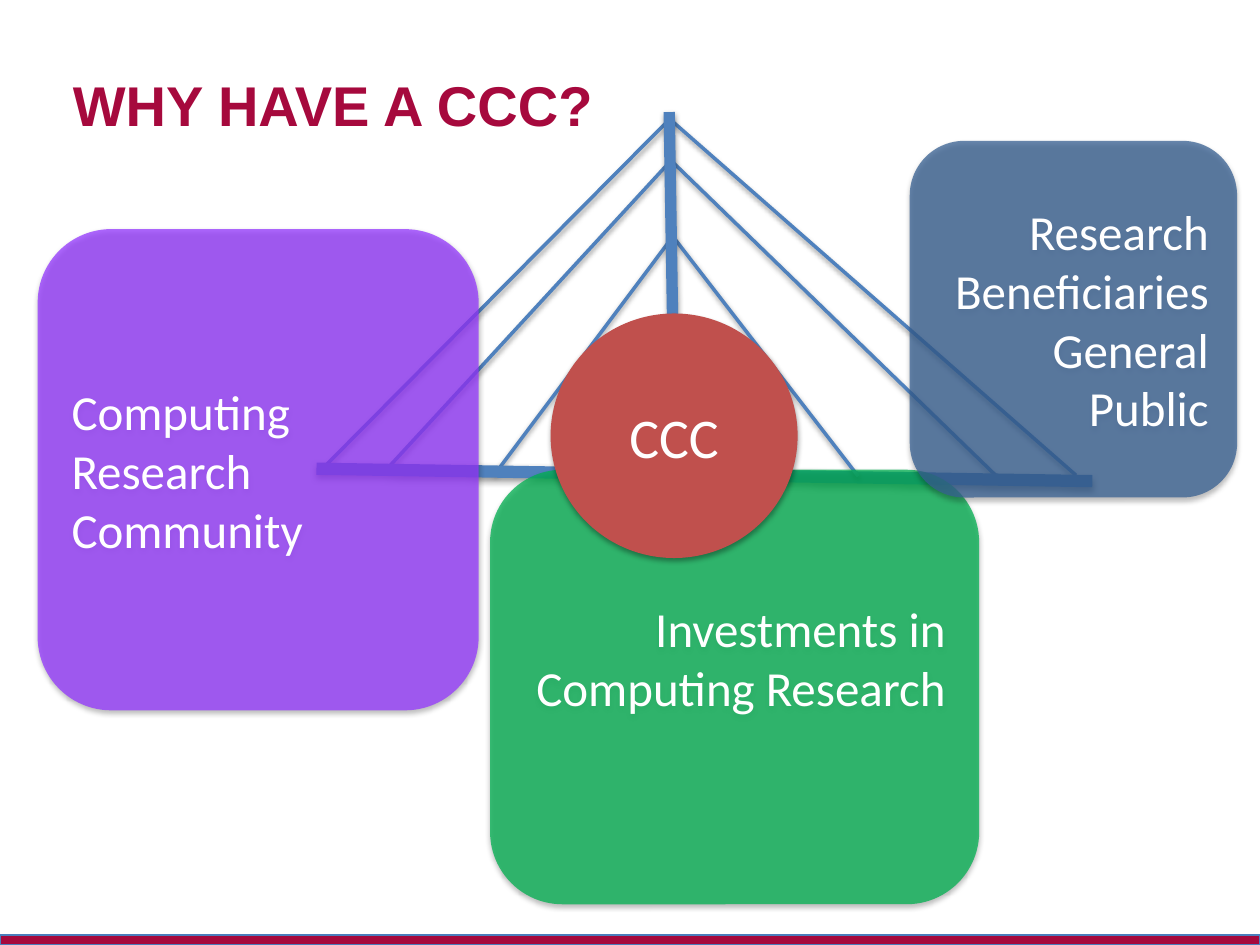
from lxml import etree
from pptx import Presentation
from pptx.dml.color import RGBColor
from pptx.enum.shapes import MSO_CONNECTOR, MSO_SHAPE
from pptx.enum.text import MSO_ANCHOR, PP_ALIGN
from pptx.oxml.ns import qn
from pptx.util import Cm, Pt

RECT, ROUND, OVAL = MSO_SHAPE.RECTANGLE, MSO_SHAPE.ROUNDED_RECTANGLE, MSO_SHAPE.OVAL
LEFT, CENTER, RIGHT = PP_ALIGN.LEFT, PP_ALIGN.CENTER, PP_ALIGN.RIGHT
STRAIGHT = MSO_CONNECTOR.STRAIGHT
MIDDLE = MSO_ANCHOR.MIDDLE


def rgb(value):
    return RGBColor.from_string(value)


def add_shadow(s, opacity, distance):
    effects = etree.SubElement(s._element.spPr, qn("a:effectLst"))
    shadow = etree.SubElement(effects, qn("a:outerShdw"), blurRad=str(Pt(3.1)),
                              dist=str(Pt(distance)), dir="5400000", rotWithShape="0")
    color = etree.SubElement(shadow, qn("a:srgbClr"), val="000000")
    etree.SubElement(color, qn("a:alpha"), val=str(opacity * 1000))


prs = Presentation()
prs.slide_width, prs.slide_height = Cm(25.4), Cm(19.05)
slide = prs.slides.add_slide(prs.slide_layouts[6])
shapes = slide.shapes

bar = shapes.add_shape(RECT, Cm(0), Cm(18.85), Cm(25.4), Cm(0.2))
bar.shadow.inherit = False
bar.fill.solid()
bar.fill.fore_color.rgb = rgb("A6093D")
bar.line.color.rgb = rgb("4B7EBC")
bar.line.width = Pt(0.75)

bridge = [
    (13.54, 4.8, 9.98, 9.55, 2),
    (13.56, 3.2, 7.85, 9.4, 2),
    (6.5, 9.45, 13.51, 2.39, 2),
    (13.49, 2.39, 21.69, 9.58, 2),
    (13.49, 3.2, 20.09, 9.6, 2),
    (6.38, 9.45, 22.02, 9.7, 7),
    (13.59, 4.8, 17.3, 9.6, 2),
    (13.49, 2.26, 13.61, 9.55, 6.5),
]
for x1, y1, x2, y2, width in bridge:
    cable = shapes.add_connector(STRAIGHT, Cm(x1), Cm(y1), Cm(x2), Cm(y2))
    cable.line.color.rgb = rgb("4F81BD")
    cable.line.width = Pt(width)
    add_shadow(cable, 38, 1.6)

title = shapes.add_textbox(Cm(1.22), Cm(0.51), Cm(22.86), Cm(3.18))
tf = title.text_frame
tf.word_wrap = True
tf.vertical_anchor = MIDDLE
r = tf.paragraphs[0].add_run()
r.text = "WHY HAVE A CCC?"
r.font.name = "Arial"
r.font.size = Pt(32)
r.font.bold = True
r.font.color.rgb = rgb("A6093D")

groups = [
    (ROUND, 0.76, 4.62, 8.89, 9.7, "9437FF", 75, LEFT, 28, 0.13,
     ["Computing", "Research Community"]),
    (ROUND, 9.88, 9.47, 9.86, 8.76, "00B050", 75, RIGHT, 28, 1.32,
     ["Investments in Computing Research"]),
    (OVAL, 11.1, 6.32, 4.98, 4.93, "C0504D", 100, CENTER, 32, 0.13, ["CCC"]),
    (ROUND, 18.34, 2.84, 6.6, 7.19, "376092", 75, RIGHT, 28, 0.13,
     ["Research Beneficiaries", "General Public"]),
]
for kind, x, y, w, h, color, opacity, align, size, bottom, lines in groups:
    sp = shapes.add_shape(kind, Cm(x), Cm(y), Cm(w), Cm(h))
    sp.fill.solid()
    sp.fill.fore_color.rgb = rgb(color)
    if opacity < 100:
        fill_color = sp._element.spPr.find(qn("a:solidFill"))[0]
        etree.SubElement(fill_color, qn("a:alpha"), val=str(opacity * 1000))
    sp.line.fill.background()
    add_shadow(sp, 35, 1.8)
    tf = sp.text_frame
    tf.word_wrap = True
    tf.vertical_anchor = MIDDLE
    tf.margin_bottom = Cm(bottom)
    for i, line in enumerate(lines):
        p = tf.add_paragraph() if i else tf.paragraphs[0]
        p.alignment = align
        r = p.add_run()
        r.text = line
        r.font.name = "Calibri"
        r.font.size = Pt(size)
        r.font.color.rgb = rgb("FFFFFF")

prs.save("out.pptx")
